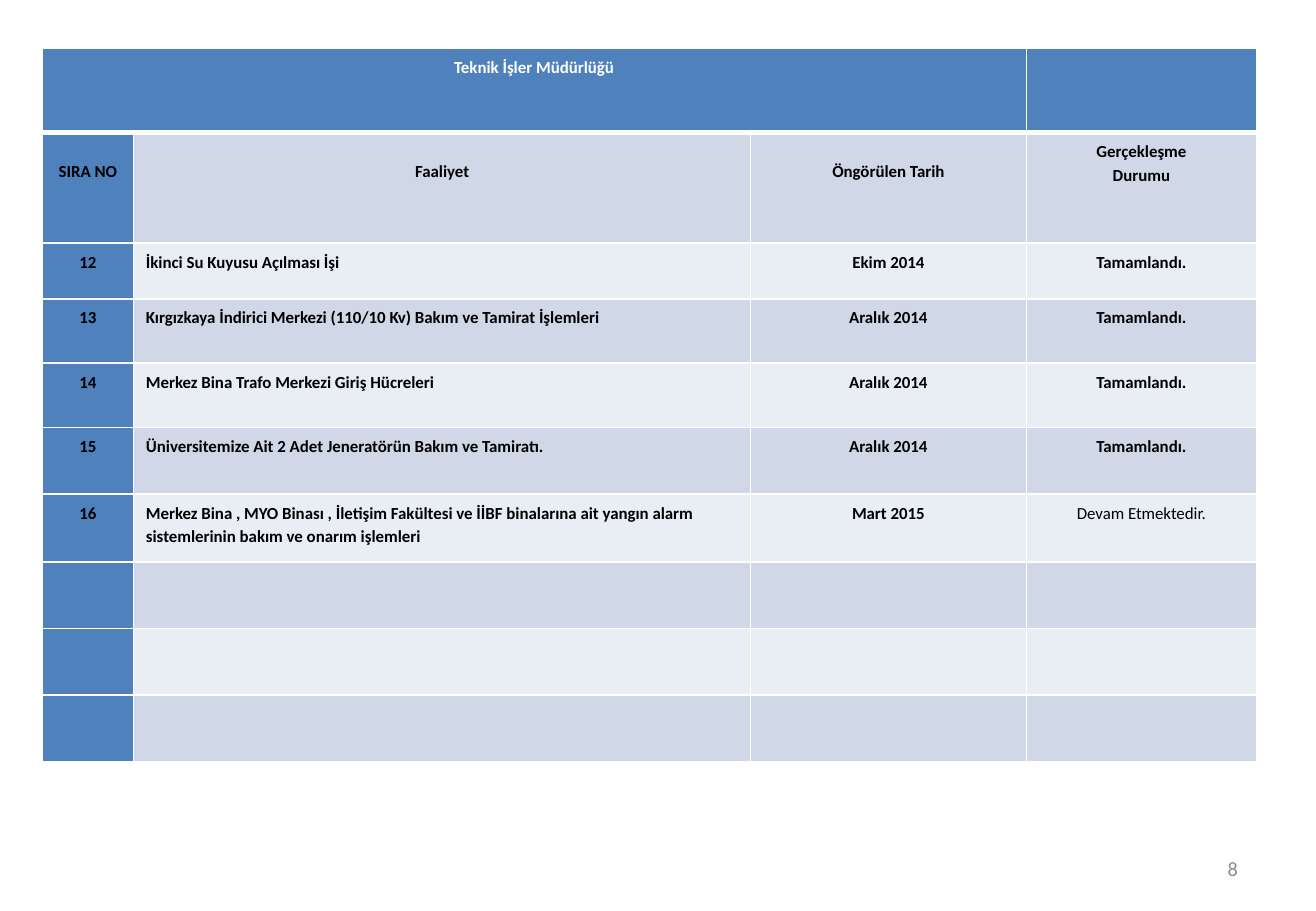
"""Build the activity table slide of the technical works directorate."""
from lxml.etree import SubElement
from pptx import Presentation
from pptx.dml.color import RGBColor
from pptx.enum.text import MSO_ANCHOR, PP_ALIGN
from pptx.oxml.ns import qn
from pptx.util import Pt

HEADER_FILL = "4F81BD"
BAND_FILLS = ("D0D8E8", "E9EDF4")
COLUMN_WIDTHS = (54.5, 365.5, 163.5, 136.5)
ROW_HEIGHTS = (50.2, 65.5, 33.1, 38, 38.2, 39.5, 40.3, 39.5, 39.5, 39.5)
TITLE = "Teknik İşler Müdürlüğü"
HEADINGS = ("SIRA NO", "Faaliyet", "Öngörülen Tarih", "Gerçekleşme\nDurumu")
DONE = "Tamamlandı."
ACTIVITIES = (
    ("12", "İkinci Su Kuyusu Açılması İşi", "Ekim 2014", DONE),
    ("13", "Kırgızkaya İndirici Merkezi (110/10 Kv) Bakım ve Tamirat İşlemleri",
     "Aralık 2014", DONE),
    ("14", "Merkez Bina Trafo Merkezi Giriş Hücreleri", "Aralık 2014", DONE),
    ("15", "Üniversitemize Ait 2 Adet Jeneratörün Bakım ve Tamiratı.",
     "Aralık 2014", DONE),
    ("16", "Merkez Bina , MYO Binası , İletişim Fakültesi ve İİBF binalarına ait "
     "yangın alarm sistemlerinin bakım ve onarım işlemleri",
     "Mart 2015", "Devam Etmektedir."),
)


def color(value):
    """Turn a hex string into a colour."""
    return RGBColor.from_string(value)


def write_text(frame, text, size=10, fill="000000", bold=True,
               align=PP_ALIGN.CENTER, spacing=1.15):
    """Write one paragraph per line of text in one format."""
    for index, line in enumerate(text.split("\n")):
        paragraph = frame.paragraphs[0] if index == 0 else frame.add_paragraph()
        paragraph.alignment = align
        paragraph.line_spacing = spacing
        run = paragraph.add_run()
        run.text = line
        run.font.name = "Calibri"
        run.font.size = Pt(size)
        run.font.bold = bold
        run.font.color.rgb = color(fill)


class SlideBuilder:
    """Hold the border style and the current slide."""

    border_color = "FFFFFF"

    def __init__(self, slide):
        """Keep the slide to draw on."""
        self.slide = slide

    def text_box(self, left, top, width, height, text, **text_format):
        """Add a vertically centred text box."""
        box = self.slide.shapes.add_textbox(Pt(left), Pt(top), Pt(width), Pt(height))
        box.text_frame.word_wrap = True
        box.text_frame.vertical_anchor = MSO_ANCHOR.MIDDLE
        write_text(box.text_frame, text, **text_format)

    def table(self, left, top, widths, heights):
        """Add an unstyled table with the given column and row sizes."""
        table = self.slide.shapes.add_table(
            len(heights), len(widths), Pt(left), Pt(top),
            Pt(sum(widths)), Pt(sum(heights))).table
        table.first_row = table.horz_banding = False
        for column, width in zip(table.columns, widths):
            column.width = Pt(width)
        for row, height in zip(table.rows, heights):
            row.height = Pt(height)
        return table

    def style_cell(self, cell, fill, top_line=1, bottom_line=1):
        """Give a cell its borders and fill."""
        properties = cell._tc.get_or_add_tcPr()
        sides = {"a:lnL": 1, "a:lnR": 1, "a:lnT": top_line, "a:lnB": bottom_line}
        for tag, width in sides.items():
            line = SubElement(properties, qn(tag), w=str(Pt(width)))
            solid = SubElement(line, qn("a:solidFill"))
            SubElement(solid, qn("a:srgbClr"), val=self.border_color)
        cell.fill.solid()
        cell.fill.fore_color.rgb = color(fill)


def main():
    """Build and save the slide."""
    presentation = Presentation()
    presentation.slide_width, presentation.slide_height = Pt(780), Pt(540)
    builder = SlideBuilder(presentation.slides.add_slide(presentation.slide_layouts[6]))

    table = builder.table(24.8, 28.4, COLUMN_WIDTHS, ROW_HEIGHTS)
    for row in range(len(ROW_HEIGHTS)):
        for column in range(len(COLUMN_WIDTHS)):
            is_header = row == 0 or column == 0
            builder.style_cell(
                table.cell(row, column),
                HEADER_FILL if is_header else BAND_FILLS[(row - 1) % 2],
                top_line=3 if row == 1 else 1,
                bottom_line=3 if row == 0 else 1)

    table.cell(0, 0).merge(table.cell(0, 2))
    write_text(table.cell(0, 0).text_frame, TITLE, fill="FFFFFF")
    for column, heading in enumerate(HEADINGS):
        cell = table.cell(1, column)
        if "\n" not in heading:
            cell.margin_top = Pt(15.6)
        write_text(cell.text_frame, heading)
    for row, activity in enumerate(ACTIVITIES, start=2):
        for column, text in enumerate(activity):
            write_text(table.cell(row, column).text_frame, text,
                       bold=column < 3 or text == DONE,
                       align=PP_ALIGN.LEFT if column == 1 else PP_ALIGN.CENTER)

    builder.text_box(558.8, 500.5, 182, 29, "8", size=12, fill="8C8C8C",
                     bold=False, align=PP_ALIGN.RIGHT, spacing=1)
    presentation.save("out.pptx")


if __name__ == "__main__":
    main()
